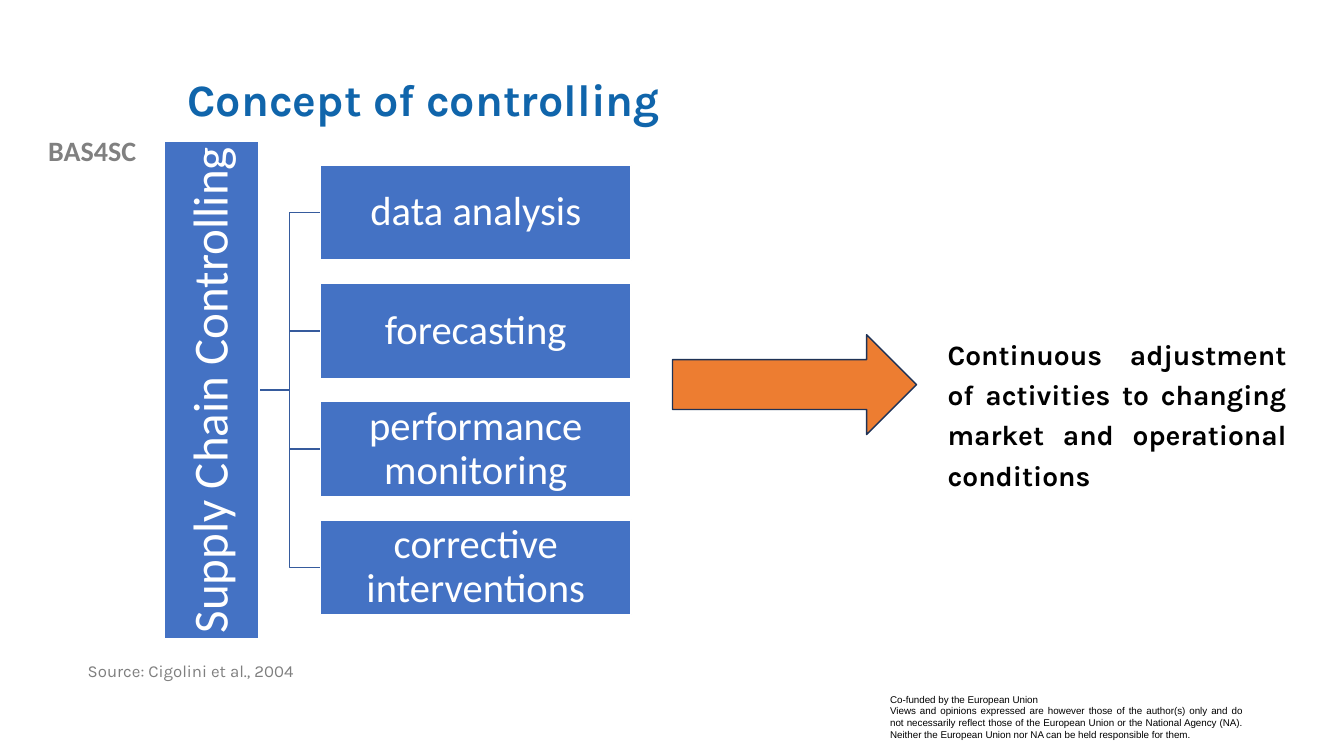
from pptx import Presentation
from pptx.dml.color import RGBColor
from pptx.enum.shapes import MSO_SHAPE
from pptx.enum.text import MSO_ANCHOR, PP_ALIGN
from pptx.util import Inches, Pt
from lxml import etree

RECT, ARROW = MSO_SHAPE.RECTANGLE, MSO_SHAPE.RIGHT_ARROW
TOP, MIDDLE = MSO_ANCHOR.TOP, MSO_ANCHOR.MIDDLE
LEFT, CENTER, JUSTIFY = PP_ALIGN.LEFT, PP_ALIGN.CENTER, PP_ALIGN.JUSTIFY
A = "{http://schemas.openxmlformats.org/drawingml/2006/main}"


def rgb(value):
    return RGBColor.from_string(value)


def write(sp, text, size, font="Calibri", color="FFFFFF", bold=False,
          align=LEFT, anchor=TOP, spacing=1.0, inset=None):
    tf = sp.text_frame
    tf.word_wrap = True
    tf.vertical_anchor = anchor
    if inset is not None:
        tf.margin_left = tf.margin_right = Inches(inset)
        tf.margin_top = tf.margin_bottom = Inches(inset)
    tf.text = text
    for p in tf.paragraphs:
        p.alignment = align
        p.line_spacing = spacing
        p.space_before = Pt(0)
        for r in p.runs:
            r.font.name = font
            r.font.size = Pt(size)
            r.font.bold = bold
            r.font.color.rgb = rgb(color)


prs = Presentation()
prs.slide_width, prs.slide_height = Inches(13.33), Inches(7.5)
s = prs.slides.add_slide(prs.slide_layouts[1])

title, source = s.placeholders
title.left, title.top, title.width, title.height = map(Inches, (1.76, 0.4, 10.66, 1.22))
write(title, "Concept of controlling", 32, "Karla", "1065AB", True, anchor=MIDDLE, spacing=0.9)

source.left, source.top, source.width, source.height = map(Inches, (0.77, 6.53, 5.01, 0.52))
write(source, "Source: Cigolini et al., 2004", 12, "Karla", "7F7F7F", spacing=0.9)
pPr = source.text_frame.paragraphs[0]._p.get_or_add_pPr()
pPr.set("marL", "0")
pPr.set("indent", "0")
etree.SubElement(pPr, A + "buNone")

notes = [
    ((0, 1.28, 1.83, 0.44), "BAS4SC",
     dict(size=20, color="808080", bold=True, align=CENTER)),
    ((8.73, 6.83, 3.69, 0.57),
     "Co-funded by the European Union\n"
     "Views and opinions expressed are however those of the author(s) only and do not "
     "necessarily reflect those of the European Union or the National Agency (NA). "
     "Neither the European Union nor NA can be held responsible for them.",
     dict(size=7, font="Arial", color="000000", align=JUSTIFY)),
    ((9.3, 3.23, 3.56, 1.69),
     "Continuous adjustment of activities to changing market and operational conditions",
     dict(size=20, font="Karla", color="000000", bold=True, align=JUSTIFY, spacing=1.2)),
]
for box, text, style in notes:
    write(s.shapes.add_textbox(*map(Inches, box)), text, **style)

ROOT_X, TRUNK_X, BOX_X = 2.57, 2.87, 3.18
BOX_TOP, BOX_W, BOX_H, PITCH = 1.64, 3.08, 0.94, 1.173
MID_Y = 3.87
BAR_W = 4.94
branches = ["data analysis", "forecasting", "performance monitoring", "corrective interventions"]

for i in range(len(branches)):
    y = BOX_TOP + BOX_H / 2 + i * PITCH
    path = s.shapes.build_freeform(Inches(ROOT_X), Inches(MID_Y))
    path.add_line_segments(
        [(Inches(TRUNK_X), Inches(MID_Y)), (Inches(TRUNK_X), Inches(y)), (Inches(BOX_X), Inches(y))],
        close=False)
    sp = path.convert_to_shape()
    sp.shadow.inherit = False
    sp.fill.background()
    sp.line.color.rgb = rgb("365B9D")
    sp.line.width = Pt(1)

blocks = [(RECT, (ROOT_X - (BAR_W + BOX_H) / 2, MID_Y - BOX_H / 2, BAR_W, BOX_H),
           "4472C4", "FFFFFF", 270, "Supply Chain Controlling", 35)]
blocks += [(RECT, (BOX_X, BOX_TOP + i * PITCH, BOX_W, BOX_H), "4472C4", "FFFFFF", 0, text, 29)
           for i, text in enumerate(branches)]
blocks.append((ARROW, (6.67, 3.32, 2.42, 0.99), "ED7D31", "1E3256", 0, "", 18))

for kind, box, fill, line, angle, text, size in blocks:
    sp = s.shapes.add_shape(kind, *map(Inches, box))
    sp.shadow.inherit = False
    sp.rotation = angle
    sp.fill.solid()
    sp.fill.fore_color.rgb = rgb(fill)
    sp.line.color.rgb = rgb(line)
    sp.line.width = Pt(1)
    if text:
        write(sp, text, size, align=CENTER, anchor=MIDDLE, spacing=0.9, inset=0.02)

prs.save("out.pptx")
